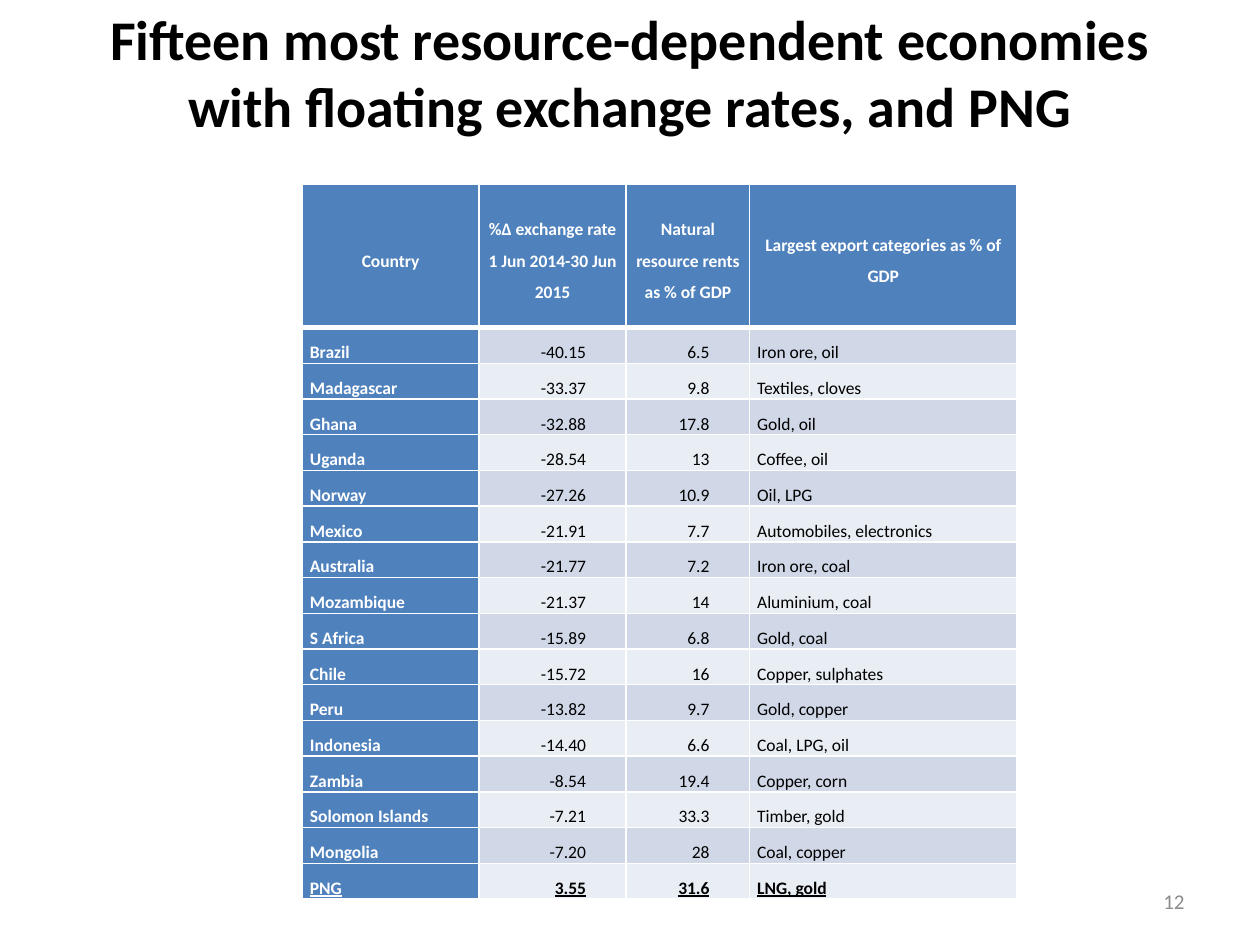
from lxml.etree import SubElement
from pptx import Presentation
from pptx.dml.color import RGBColor
from pptx.enum.text import MSO_ANCHOR, PP_ALIGN
from pptx.oxml.ns import qn
from pptx.util import Inches, Pt

TITLE = "Fifteen most resource-dependent economies with floating exchange rates, and PNG\v"
HEADER = ("Country", "%Δ exchange rate 1 Jun 2014-30 Jun 2015",
          "Natural resource rents as % of GDP", "Largest export categories as % of GDP")
ECONOMIES = [
    ("Brazil", "-40.15", "6.5", "Iron ore, oil"),
    ("Madagascar", "-33.37", "9.8", "Textiles, cloves"),
    ("Ghana", "-32.88", "17.8", "Gold, oil"),
    ("Uganda", "-28.54", "13", "Coffee, oil"),
    ("Norway", "-27.26", "10.9", "Oil, LPG"),
    ("Mexico", "-21.91", "7.7", "Automobiles, electronics"),
    ("Australia", "-21.77", "7.2", "Iron ore, coal"),
    ("Mozambique", "-21.37", "14", "Aluminium, coal"),
    ("S Africa", "-15.89", "6.8", "Gold, coal"),
    ("Chile", "-15.72", "16", "Copper, sulphates"),
    ("Peru", "-13.82", "9.7", "Gold, copper"),
    ("Indonesia", "-14.40", "6.6", "Coal, LPG, oil"),
    ("Zambia", "-8.54", "19.4", "Copper, corn"),
    ("Solomon Islands", "-7.21", "33.3", "Timber, gold"),
    ("Mongolia", "-7.20", "28", "Coal, copper"),
    ("PNG", "3.55", "31.6", "LNG, gold"),
]
COL_WIDTHS = (1.4, 1.17, 0.98, 2.12)
TABLE_HEIGHT, HEADER_HEIGHT = 5.68, 1.14


def rgb(color):
    return RGBColor.from_string(color)


class Deck:
    """Hold the style and the current slide, with a method for each kind of element."""

    font = "Calibri"
    black, white, grey = "000000", "FFFFFF", "8C8C8C"
    accent, bands = "4F81BD", ("D0D8E8", "E9EDF4")

    def __init__(self, prs):
        self.s = prs.slides.add_slide(prs.slide_layouts[5])

    def style(self, p, size, color, align, bold=False, underline=None):
        p.alignment = align
        f = p.font
        f.name, f.size, f.bold, f.underline = self.font, Pt(size), bold, underline
        f.color.rgb = rgb(color)

    def title(self, text, left, top, width, height):
        sp = self.s.shapes.title
        sp.left, sp.top, sp.width, sp.height = map(Inches, (left, top, width, height))
        tf = sp.text_frame
        tf.text = text
        tf.vertical_anchor = MSO_ANCHOR.MIDDLE
        self.style(tf.paragraphs[0], 32, self.black, PP_ALIGN.CENTER, bold=True)

    def text(self, text, left, top, width, height):
        sp = self.s.shapes.add_textbox(*map(Inches, (left, top, width, height)))
        tf = sp.text_frame
        tf.word_wrap = True
        tf.vertical_anchor = MSO_ANCHOR.MIDDLE
        tf.text = text
        self.style(tf.paragraphs[0], 12, self.grey, PP_ALIGN.RIGHT)

    def borders(self, cell, top, bottom):
        tcPr = cell._tc.get_or_add_tcPr()
        for side, width in (("L", 1), ("R", 1), ("T", top), ("B", bottom)):
            ln = SubElement(tcPr, qn(f"a:ln{side}"), w=str(Pt(width)))
            fill = SubElement(ln, qn("a:solidFill"))
            SubElement(fill, qn("a:srgbClr"), val=self.white)

    def cell(self, cell, text, row, col, last):
        header, number = row == 0, col in (1, 2)
        accented = header or col == 0
        self.borders(cell, 3 if row == 1 else 1, 3 if header else 1)
        cell.fill.solid()
        cell.fill.fore_color.rgb = rgb(self.accent if accented else self.bands[(row - 1) % 2])
        cell.margin_left = cell.margin_right = Inches(0.06)
        cell.margin_top = cell.margin_bottom = 0
        cell.vertical_anchor = MSO_ANCHOR.MIDDLE if header else MSO_ANCHOR.BOTTOM
        cell.text = text
        p = cell.text_frame.paragraphs[0]
        p.line_spacing = 1.5
        align = PP_ALIGN.CENTER if header else PP_ALIGN.RIGHT if number else PP_ALIGN.LEFT
        self.style(p, 10, self.white if accented else self.black, align,
                   bold=accented or last, underline=last or None)
        if number and not header:
            p._p.get_or_add_pPr().set("marR", str(Inches(0.26)))

    def table(self, rows, left, top, widths, height, header_height):
        frame = self.s.shapes.add_table(len(rows), len(widths), Inches(left), Inches(top),
                                        Inches(sum(widths)), Inches(height))
        table = frame.table
        for column, width in zip(table.columns, widths):
            column.width = Inches(width)
        row_height = (height - header_height) / (len(rows) - 1)
        for i, values in enumerate(rows):
            table.rows[i].height = Inches(row_height if i else header_height)
            for j, value in enumerate(values):
                self.cell(table.cell(i, j), value, i, j, last=i == len(rows) - 1)


def main():
    prs = Presentation()
    prs.slide_width, prs.slide_height = Inches(10), Inches(7.5)
    deck = Deck(prs)
    deck.title(TITLE, 0.5, 0.21, 9, 1.25)
    deck.table([HEADER] + ECONOMIES, 2.4, 1.46, COL_WIDTHS, TABLE_HEIGHT, HEADER_HEIGHT)
    deck.text("12", 7.17, 6.95, 2.33, 0.4)
    prs.save("out.pptx")


if __name__ == "__main__":
    main()
